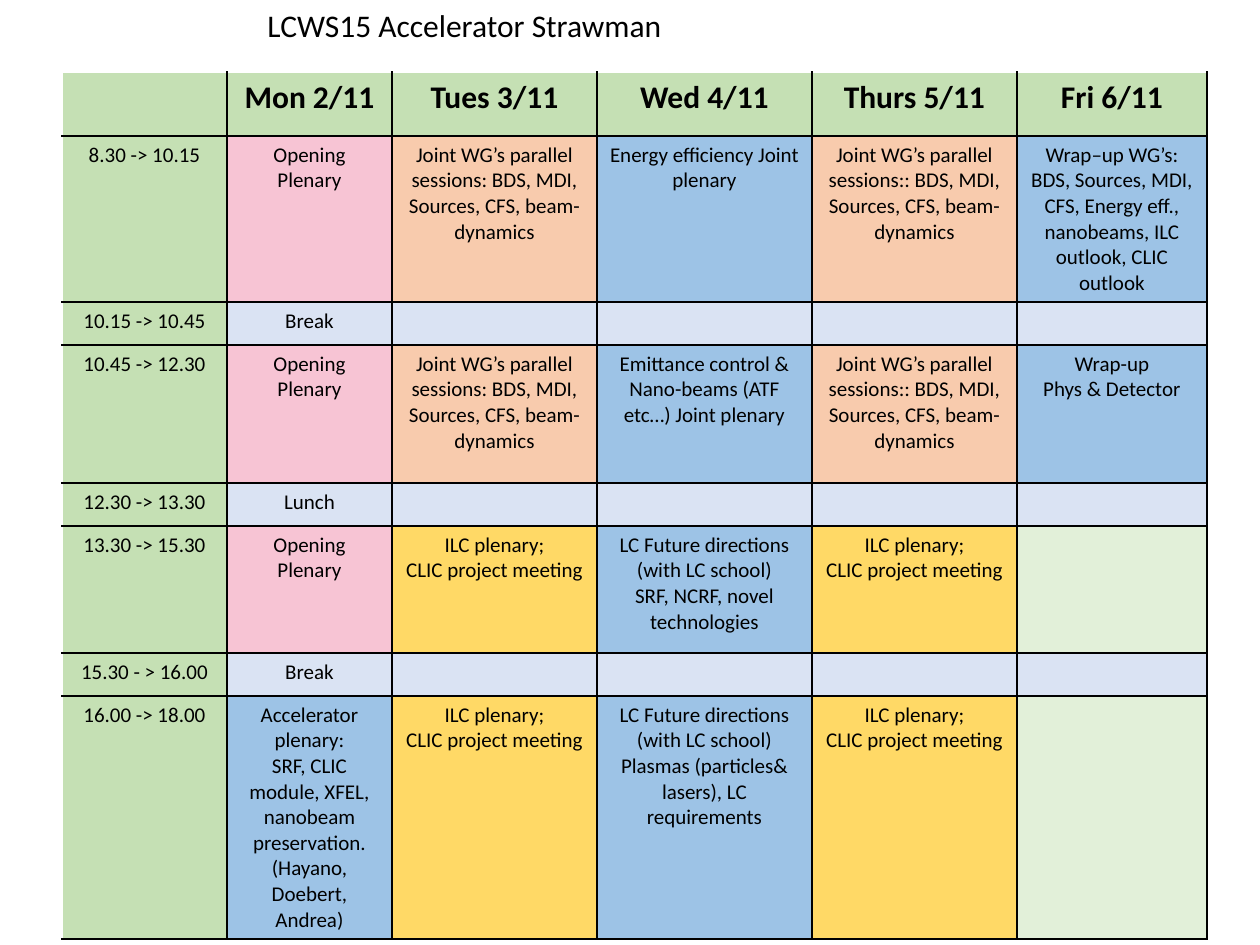
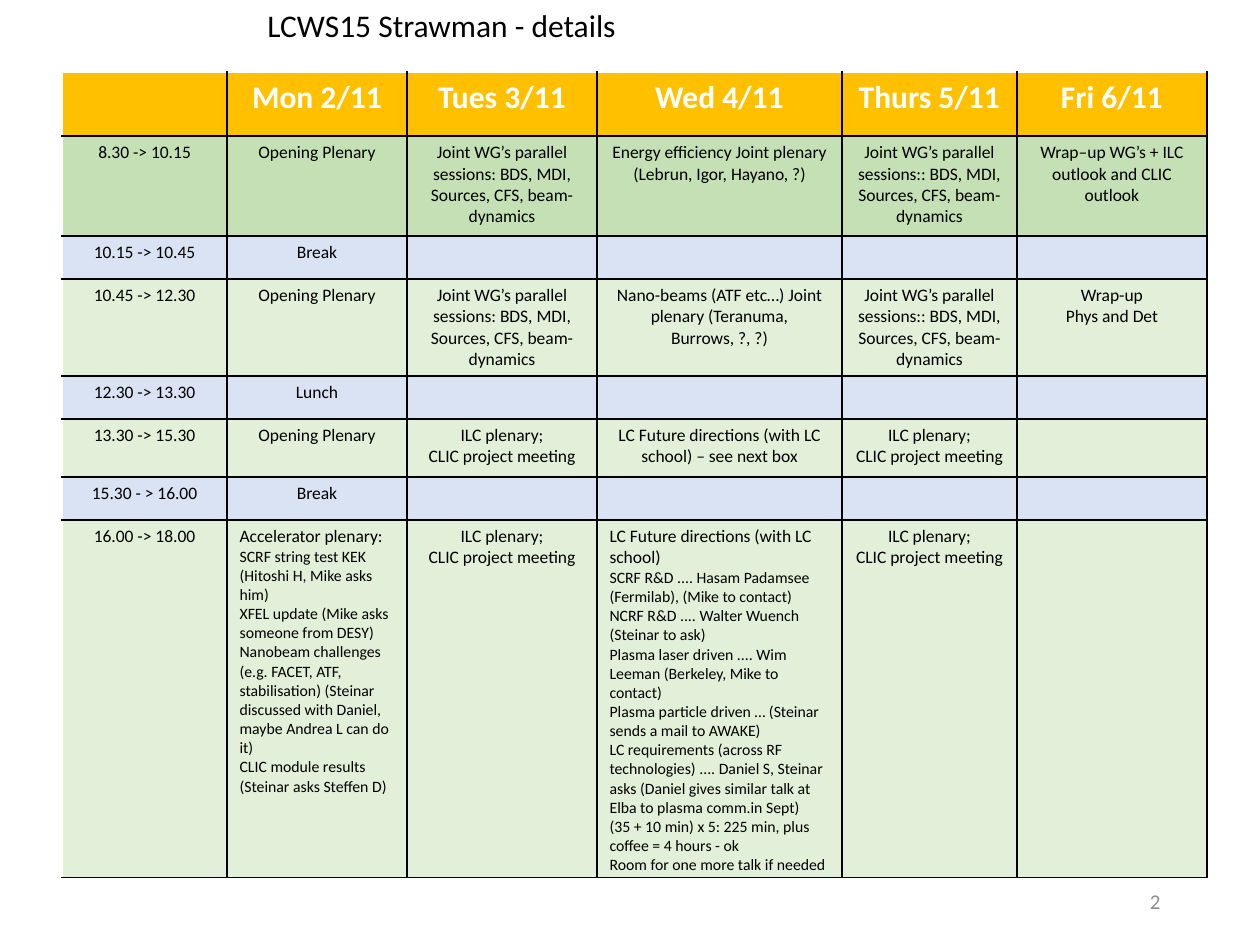
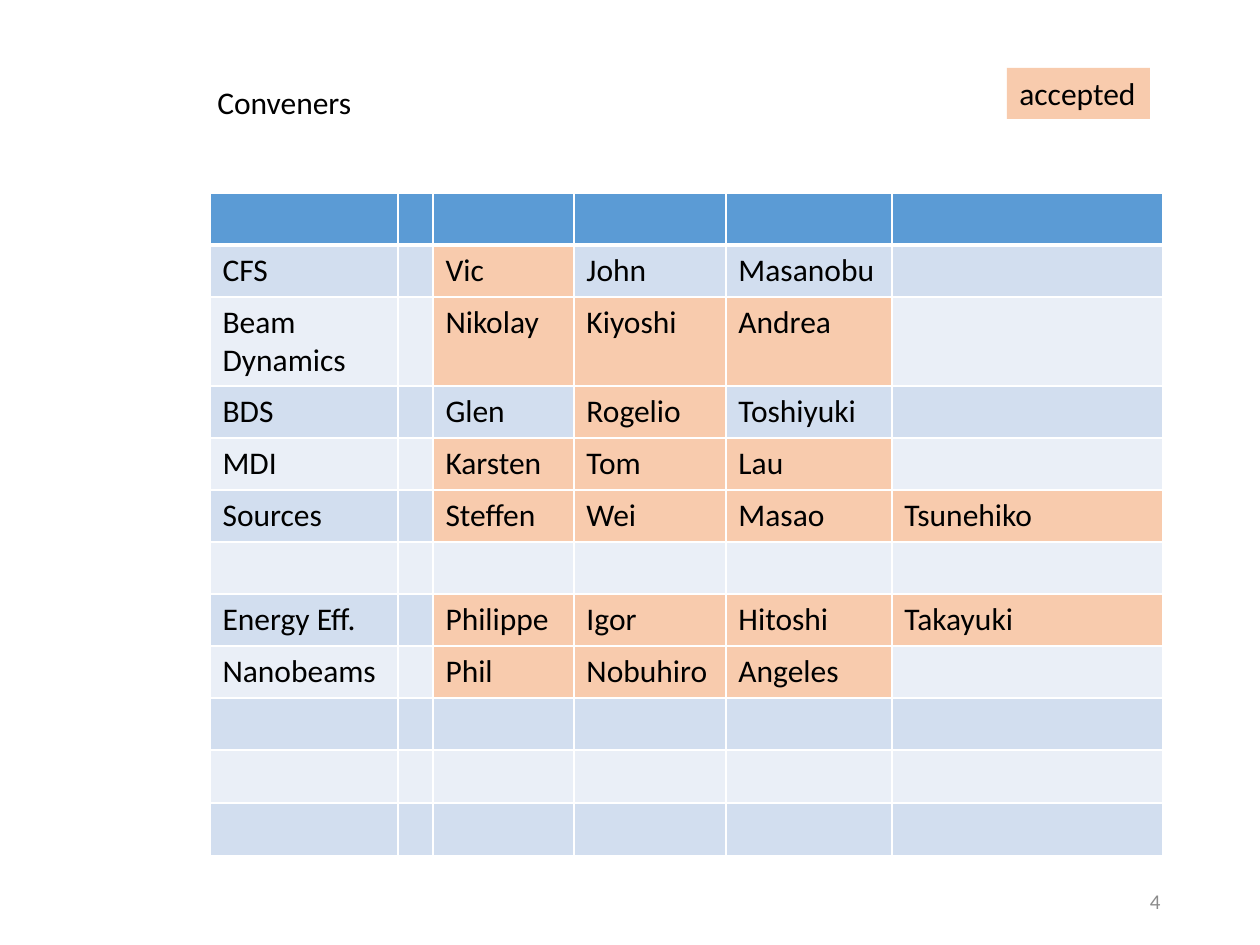
from lxml import etree
from pptx import Presentation
from pptx.dml.color import RGBColor
from pptx.enum.text import MSO_ANCHOR, MSO_AUTO_SIZE, PP_ALIGN
from pptx.oxml.ns import qn
from pptx.util import Pt

PX = 7257
LEFT, CENTER, RIGHT = PP_ALIGN.LEFT, PP_ALIGN.CENTER, PP_ALIGN.RIGHT
TOP, MIDDLE = MSO_ANCHOR.TOP, MSO_ANCHOR.MIDDLE
FIT_SHAPE = MSO_AUTO_SIZE.SHAPE_TO_FIT_TEXT
FONT = "Calibri"
BLACK, WHITE, GREY = "000000", "FFFFFF", "8C8C8C"
ACCEPTED = "F8CBAD"
FILLS = {
    "G": "C5E0B4",
    "L": "E2F0D9",
    "P": "F7C4D4",
    "O": ACCEPTED,
    "B": "9DC3E6",
    "S": "DAE3F3",
    "Y": "FFD966",
    "A": "FFC000",
    "H": "5B9BD5",
    "D": "D2DEEF",
    "E": "EAEFF7",
}

DAYS = ["", "Mon 2/11", "Tues 3/11", "Wed 4/11", "Thurs 5/11", "Fri 6/11"]
JOINT_TUESDAY = "Joint WG’s parallel sessions: BDS, MDI, Sources, CFS, beam-dynamics"
JOINT_THURSDAY = JOINT_TUESDAY.replace("sessions:", "sessions::")
PROJECTS = "ILC plenary;\nCLIC project meeting"
OPENING = "Opening Plenary"
FUTURE = "LC Future directions (with LC school)"
MORNING_BREAK = ["10.15 -> 10.45", "Break", "", "", "", ""]
LUNCH = ["12.30 -> 13.30", "Lunch", "", "", "", ""]
AFTERNOON_BREAK = ["15.30 - > 16.00", "Break", "", "", "", ""]

ACCELERATOR_TALKS = """Accelerator plenary:
SCRF string test KEK (Hitoshi H, Mike asks him)
XFEL update (Mike asks someone from DESY)
Nanobeam challenges (e.g. FACET, ATF, stabilisation) (Steinar discussed with Daniel, maybe Andrea L can do it)
CLIC module results (Steinar asks Steffen D)"""
FUTURE_TALKS = FUTURE + """
SCRF R&D .... Hasam Padamsee (Fermilab), (Mike to contact)
NCRF R&D .... Walter Wuench (Steinar to ask)
Plasma laser driven .... Wim Leeman (Berkeley, Mike to contact)
Plasma particle driven … (Steinar sends a mail to AWAKE)
LC requirements (across RF technologies) .... Daniel S, Steinar asks (Daniel gives similar talk at Elba to plasma comm.in Sept)
(35 + 10 min) x 5: 225 min, plus coffee = 4 hours - ok
Room for one more talk if needed"""

OVERVIEW = [
    DAYS,
    ["8.30 -> 10.15", OPENING, JOINT_TUESDAY, "Energy efficiency Joint plenary", JOINT_THURSDAY,
     "Wrap–up WG’s:\nBDS, Sources, MDI, CFS, Energy eff., nanobeams, ILC outlook, CLIC outlook"],
    MORNING_BREAK,
    ["10.45 -> 12.30", OPENING, JOINT_TUESDAY,
     "Emittance control & Nano-beams (ATF etc…) Joint plenary", JOINT_THURSDAY,
     "Wrap-up\nPhys & Detector"],
    LUNCH,
    ["13.30 -> 15.30", OPENING, PROJECTS, FUTURE + "\nSRF, NCRF, novel technologies", PROJECTS, ""],
    AFTERNOON_BREAK,
    ["16.00 -> 18.00",
     "Accelerator plenary:\nSRF, CLIC module, XFEL, nanobeam preservation. (Hayano, Doebert, Andrea)",
     PROJECTS, FUTURE + "\nPlasmas (particles& lasers), LC requirements", PROJECTS, ""],
]
DETAILS = [
    DAYS,
    ["8.30 -> 10.15", OPENING, JOINT_TUESDAY,
     "Energy efficiency Joint plenary (Lebrun, Igor, Hayano, ?)", JOINT_THURSDAY,
     "Wrap–up WG’s + ILC outlook and CLIC outlook"],
    MORNING_BREAK,
    ["10.45 -> 12.30", OPENING, JOINT_TUESDAY,
     "Nano-beams (ATF etc…) Joint plenary (Teranuma, Burrows, ?, ?)", JOINT_THURSDAY,
     "Wrap-up\nPhys and Det"],
    LUNCH,
    ["13.30 -> 15.30", OPENING, PROJECTS, FUTURE + " – see next box", PROJECTS, ""],
    AFTERNOON_BREAK,
    ["16.00 -> 18.00", ACCELERATOR_TALKS, PROJECTS, FUTURE_TALKS, PROJECTS, ""],
]
EMPTY_ROW = [""] * 6
CONVENERS = [
    EMPTY_ROW,
    ["CFS", "", "Vic", "John", "Masanobu", ""],
    ["Beam Dynamics", "", "Nikolay", "Kiyoshi", "Andrea", ""],
    ["BDS", "", "Glen", "Rogelio", "Toshiyuki", ""],
    ["MDI", "", "Karsten", "Tom", "Lau", ""],
    ["Sources", "", "Steffen", "Wei", "Masao", "Tsunehiko"],
    EMPTY_ROW,
    ["Energy Eff.", "", "Philippe", "Igor", "Hitoshi", "Takayuki"],
    ["Nanobeams", "", "Phil", "Nobuhiro", "Angeles", ""],
    EMPTY_ROW,
    EMPTY_ROW,
    EMPTY_ROW,
]

TITLE = {"align": LEFT, "anchor": TOP, "wrap": False, "size": 18, "color": BLACK, "fill": None}
PAGE_NUMBER = {"align": RIGHT, "anchor": MIDDLE, "wrap": True, "size": 12, "color": GREY, "fill": None}
LEGEND = {**TITLE, "fill": ACCEPTED}
PAGE_NUMBER_BOX = (890, 876, 283, 50)

SLIDES = [
    {
        "labels": [("LCWS15 Accelerator Strawman", (255, 0, 426, 50), TITLE)],
        "rows": OVERVIEW,
        "fills": ["GGGGGG", "GPOBOB", "GSSSSS", "GPOBOB", "GSSSSS", "GPYBYL", "GSSSSS", "GBYBYL"],
        "origin": (62, 72),
        "widths": [165, 165, 205, 215, 205, 190],
        "heights": [64, 164, 43, 138, 43, 127, 43, 240],
        "size": 12, "header_color": BLACK, "bold_header": True, "align": CENTER,
        "line": BLACK, "outer_line": WHITE, "header_line": 1,
    },
    {
        "labels": [("LCWS15 Strawman - details", (255, 0, 379, 50), TITLE),
                   ("2", PAGE_NUMBER_BOX, PAGE_NUMBER)],
        "rows": DETAILS,
        "fills": ["AAAAAA", "GGGGGG"] + ["SSSSSS", "LLLLLL"] * 3,
        "origin": (62, 72),
        "widths": [165, 180, 190, 245, 175, 190],
        "heights": [64, 100, 43, 97, 43, 58, 43, 358],
        "size": 10, "header_color": WHITE, "bold_header": True, "align": CENTER,
        "line": BLACK, "outer_line": WHITE, "header_line": 1,
    },
    {
        "labels": [("Conveners", (205, 77, 163, 50), TITLE),
                   ("4", PAGE_NUMBER_BOX, PAGE_NUMBER),
                   ("accepted", (1007, 68, 143, 51), LEGEND)],
        "rows": CONVENERS,
        "fills": ["HHHHHH", "DDODDD", "EEOOOE", "DDDODD", "EEOOOE", "DDOOOO",
                  "EEEEEE", "DDOOOO", "EEOOOE", "DDDDDD", "EEEEEE", "DDDDDD"],
        "origin": (210, 193),
        "widths": [188, 35, 141, 152, 166, 271],
        "heights": [52, 52, 89] + [52] * 7 + [53] * 2,
        "size": 18, "header_color": BLACK, "bold_header": False, "align": LEFT,
        "line": WHITE, "outer_line": WHITE, "header_line": 3,
    },
]


def write_line(paragraph, text, align, size, color, bold=False):
    paragraph.alignment = align
    if not text:
        etree.SubElement(paragraph._p, qn("a:endParaRPr"), sz=str(size * 100))
        return
    run = paragraph.add_run()
    run.text = text
    for name, value in {"name": FONT, "size": Pt(size), "bold": bold}.items():
        setattr(run.font, name, value)
    run.font.color.rgb = RGBColor.from_string(color)


def add_border(cell, side, color, width):
    properties = cell._tc.get_or_add_tcPr()
    line = etree.SubElement(properties, qn(f"a:ln{side}"), w=str(Pt(width)))
    fill = etree.SubElement(line, qn("a:solidFill"))
    etree.SubElement(fill, qn("a:srgbClr"), val=color)


presentation = Presentation()
presentation.slide_width = 1260 * PX
presentation.slide_height = 945 * PX

for content in SLIDES:
    slide = presentation.slides.add_slide(presentation.slide_layouts[6])

    rows, widths, heights = content["rows"], content["widths"], content["heights"]
    frame = (*content["origin"], sum(widths), sum(heights))
    table = slide.shapes.add_table(len(rows), len(widths), *(length * PX for length in frame)).table
    table.first_row = False
    table.horz_banding = False
    for column, width in zip(table.columns, widths):
        column.width = width * PX
    for row, height in zip(table.rows, heights):
        row.height = height * PX

    for row_index, texts in enumerate(rows):
        is_header = row_index == 0
        for column_index, text in enumerate(texts):
            cell = table.cell(row_index, column_index)
            line, outer_line = content["line"], content["outer_line"]
            add_border(cell, "L", outer_line if column_index == 0 else line, 1)
            add_border(cell, "R", line, 1)
            add_border(cell, "T", outer_line if is_header else line,
                       content["header_line"] if row_index == 1 else 1)
            add_border(cell, "B", line, content["header_line"] if is_header else 1)
            cell.fill.solid()
            cell.fill.fore_color.rgb = RGBColor.from_string(FILLS[content["fills"][row_index][column_index]])

            lines = text.split("\n")
            is_talk_list = len(lines) > 2
            for line_index, line_text in enumerate(lines):
                paragraph = cell.text_frame.paragraphs[0] if line_index == 0 else cell.text_frame.add_paragraph()
                size = content["size"]
                if is_header and text:
                    size = 18
                elif is_talk_list and line_index > 0:
                    size = 9
                write_line(paragraph, line_text, LEFT if is_talk_list else content["align"], size,
                           content["header_color"] if is_header else BLACK,
                           is_header and content["bold_header"])

    for text, box, style in content["labels"]:
        label = slide.shapes.add_textbox(*(length * PX for length in box))
        text_frame = label.text_frame
        text_frame.word_wrap = style["wrap"]
        text_frame.vertical_anchor = style["anchor"]
        if not style["wrap"]:
            text_frame.auto_size = FIT_SHAPE
        if style["fill"]:
            label.fill.solid()
            label.fill.fore_color.rgb = RGBColor.from_string(style["fill"])
        write_line(text_frame.paragraphs[0], text, style["align"], style["size"], style["color"])

presentation.save("out.pptx")
